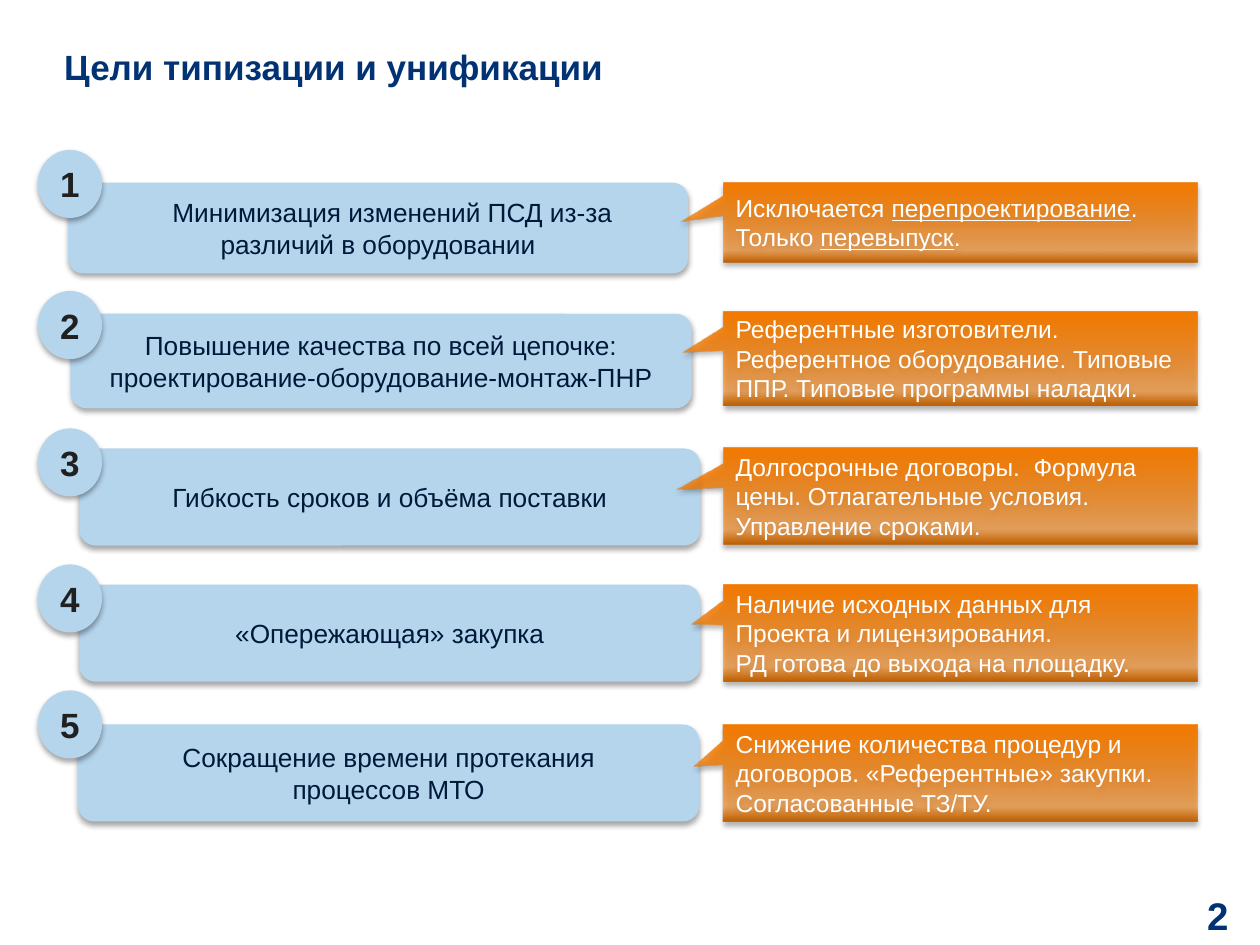
from lxml import etree
from pptx import Presentation
from pptx.dml.color import RGBColor
from pptx.enum.shapes import MSO_SHAPE
from pptx.enum.text import MSO_ANCHOR, PP_ALIGN
from pptx.oxml.ns import qn
from pptx.util import Inches, Pt

BAR, BADGE = MSO_SHAPE.ROUNDED_RECTANGLE, MSO_SHAPE.FLOWCHART_CONNECTOR
CALLOUT = MSO_SHAPE.RECTANGULAR_CALLOUT
LEFT, CENTER, RIGHT = PP_ALIGN.LEFT, PP_ALIGN.CENTER, PP_ALIGN.RIGHT
MIDDLE = MSO_ANCHOR.MIDDLE

COLS, ROWS = 100, 75
FONT = "Arial"
NAVY, INK, DARK, WHITE = "003274", "00193A", "202021", "FFFFFF"
BLUE = "B5D5ED"
ORANGE = [(0, "BB5D00", 100), (16, "F27900", 55), (100, "F37A00", 100)]

GOALS = [
    dict(box=(5.4, 14.5, 49.2, 7.2), rise=2.6, note=(0, 6.3),
         tail=(-0.591, -0.006), indent=0.23,
         goal=["Минимизация изменений ПСД из-за различий в оборудовании"],
         effect=["Исключается _перепроектирование_. Только _перевыпуск_."]),
    dict(box=(5.6, 24.9, 49.3, 7.5), rise=1.8, note=(-0.2, 7.5),
         tail=(-0.586, -0.064),
         goal=["Повышение качества по всей цепочке: "
               "проектирование-оборудование-монтаж-ПНР"],
         effect=["Референтные изготовители. Референтное оборудование. "
                 "Типовые ППР. Типовые программы наладки."]),
    dict(box=(6.3, 35.6, 49.3, 7.7), rise=1.6, note=(-0.1, 7.7),
         tail=(-0.599, -0.064),
         goal=["Гибкость сроков и объёма поставки"],
         effect=["Долгосрочные договоры.  Формула цены. "
                 "Отлагательные условия. Управление сроками."]),
    dict(box=(6.3, 46.4, 49.3, 7.7), rise=1.6, note=(0, 7.7),
         tail=(-0.567, -0.09),
         goal=["«Опережающая» закупка"],
         effect=["Наличие исходных данных для Проекта и лицензирования.",
                 "РД готова до выхода на площадку."]),
    dict(box=(6.2, 57.5, 49.3, 7.7), rise=2.7, note=(0, 7.7),
         tail=(-0.562, -0.064),
         goal=["Сокращение времени протекания", "процессов МТО"],
         effect=["Снижение количества процедур и договоров. "
                 "«Референтные» закупки. Согласованные ТЗ/ТУ."]),
]

prs = Presentation()
prs.slide_width, prs.slide_height = Inches(10), Inches(7.5)


def rgb(value):
    return RGBColor.from_string(value)


def place(box):
    x, y, w, h = box
    col, row = prs.slide_width / COLS, prs.slide_height / ROWS
    return int(x * col), int(y * row), int(w * col), int(h * row)


def sub(parent, tag, **attrs):
    return etree.SubElement(parent, qn(tag), {k: str(v) for k, v in attrs.items()})


def add_color(parent, value, alpha):
    sub(sub(parent, "a:srgbClr", val=value), "a:alpha", val=alpha * 1000)


def write(sp, lines, size, color, bold=False, align=LEFT, indent=0):
    tf = sp.text_frame
    tf.word_wrap = True
    tf.vertical_anchor = MIDDLE
    for i, line in enumerate(lines):
        p = tf.paragraphs[0] if i == 0 else tf.add_paragraph()
        p.alignment = align
        if indent:
            p._p.get_or_add_pPr().set("indent", str(Inches(indent)))
        for j, part in enumerate(line.split("_")):
            r = p.add_run()
            r.text = part
            r.font.name, r.font.size, r.font.bold = FONT, Pt(size), bold
            r.font.underline = j % 2 == 1
            r.font.color.rgb = rgb(color)


def add_label(s, box, text, **fmt):
    sp = s.shapes.add_textbox(*place(box))
    tf = sp.text_frame
    tf.margin_left = tf.margin_right = tf.margin_top = tf.margin_bottom = 0
    write(sp, [text], color=NAVY, bold=True, **fmt)


def add_block(s, kind, box, lines, **fmt):
    sp = s.shapes.add_shape(kind, *place(box))
    sp.fill.solid()
    sp.fill.fore_color.rgb = rgb(BLUE)
    sp.line.fill.background()
    sp.shadow.inherit = False
    effects = sp._element.spPr.find(qn("a:effectLst"))
    shadow = sub(effects, "a:outerShdw", blurRad=Pt(3.1), dist=Pt(1.8),
                 dir=5400000, rotWithShape=0)
    add_color(shadow, "000000", 35)
    write(sp, lines, **fmt)
    return sp


def fill_gradient(sp, stops):
    sp.fill.gradient()
    sp.fill.gradient_angle = 90
    gs_list = sp._element.spPr.find(qn("a:gradFill")).find(qn("a:gsLst"))
    for old in list(gs_list):
        gs_list.remove(old)
    for pos, value, alpha in stops:
        add_color(sub(gs_list, "a:gs", pos=pos * 1000), value, alpha)


def add_goal(s, number, box, rise, note, tail, goal, effect, indent=0):
    top = box[1]
    shift, height = note
    add_block(s, BAR, box, goal, size=15, color=INK, align=CENTER, indent=indent)
    add_block(s, BADGE, (3, top - rise, 5.1, 5.4), [str(number)],
              size=20, color=DARK, bold=True, align=CENTER)
    sp = add_block(s, CALLOUT, (57.4, top + shift, 37.6, height), effect,
                   size=14, color=WHITE)
    sp.adjustments[0], sp.adjustments[1] = tail
    fill_gradient(sp, ORANGE)


def main():
    s = prs.slides.add_slide(prs.slide_layouts[6])
    add_label(s, (5.1, 0, 83.5, 10.5), "Цели типизации и унификации", size=20)
    add_label(s, (90.6, 70.6, 6.9, 4.1), "2", size=22, align=RIGHT)
    for number, goal in enumerate(GOALS, 1):
        add_goal(s, number, **goal)
    prs.save("out.pptx")


if __name__ == "__main__":
    main()
